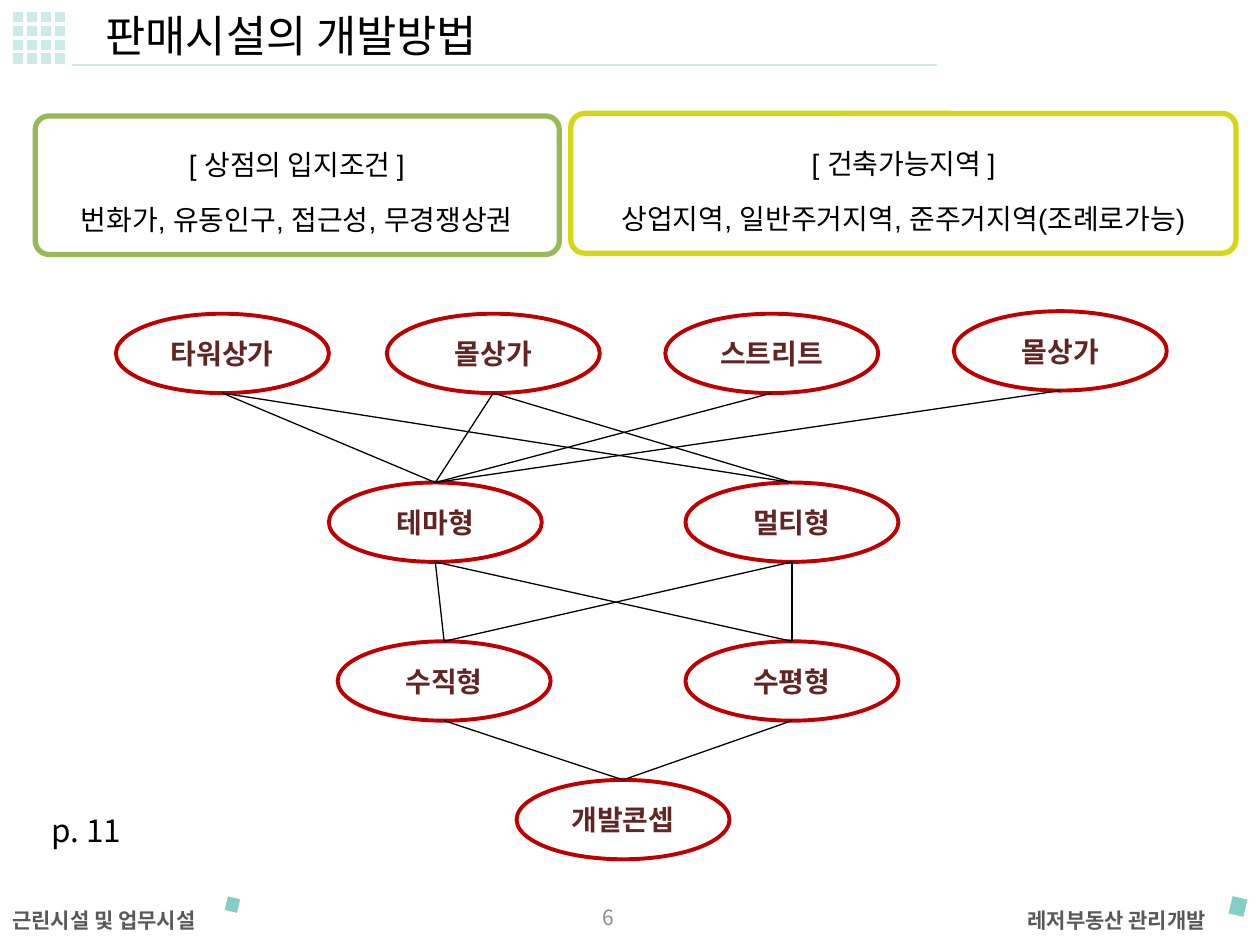
from dataclasses import dataclass
from itertools import product

from lxml.etree import SubElement
from pptx import Presentation
from pptx.dml.color import RGBColor
from pptx.enum.shapes import MSO_CONNECTOR, MSO_SHAPE
from pptx.enum.text import MSO_ANCHOR, PP_ALIGN
from pptx.oxml.ns import qn
from pptx.util import Inches, Pt

# A grid of 100 columns by 75 rows covers the slide
WIDTH, HEIGHT = Inches(10), Inches(7.5)
COLUMN, ROW = WIDTH / 100, HEIGHT / 75
KOREAN, LATIN = "Noto Sans CJK KR", "Arial"
TEAL, RED, BROWN, GREY = "44B6AB", "C00000", "632523", "595959"
NODE_WIDTH, NODE_HEIGHT = 16.9, 6.3


@dataclass(frozen=True)
class Box:
    column: float
    row: float
    columns: float
    rows: float

    def emu(self) -> tuple[int, int, int, int]:
        return (round(self.column * COLUMN), round(self.row * ROW),
                round(self.columns * COLUMN), round(self.rows * ROW))


@dataclass(frozen=True)
class Label:
    lines: tuple[str, ...]
    size: float
    color: str = "000000"
    bold: bool = False
    font: str = KOREAN
    align: PP_ALIGN = PP_ALIGN.LEFT
    anchor: MSO_ANCHOR = MSO_ANCHOR.TOP


@dataclass(frozen=True)
class Node:
    text: str
    column: float
    row: float
    children: tuple[str, ...] = ()


@dataclass(frozen=True)
class Panel:
    frame: Box
    text_box: Box
    line: str
    lines: tuple[str, str]


def rgb(color: str) -> RGBColor:
    return RGBColor.from_string(color)


def write(shape, label: Label, **paragraph_format) -> None:
    frame = shape.text_frame
    frame.word_wrap = True
    frame.vertical_anchor = label.anchor
    for index, line in enumerate(label.lines):
        paragraph = frame.paragraphs[0] if index == 0 else frame.add_paragraph()
        paragraph.alignment = label.align
        for name, value in paragraph_format.items():
            setattr(paragraph, name, value)
        run = paragraph.add_run()
        run.text = line
        values = {"name": label.font, "size": Pt(label.size), "bold": label.bold}
        for name, value in values.items():
            setattr(run.font, name, value)
        run.font.color.rgb = rgb(label.color)
        SubElement(run.font._element, qn("a:ea"), typeface=KOREAN)


def add_text(slide, box: Box, label: Label, **paragraph_format):
    shape = slide.shapes.add_textbox(*box.emu())
    write(shape, label, **paragraph_format)
    return shape


def add_shape(slide, kind: MSO_SHAPE, box: Box, fill: str, line: str,
              line_width: float, opacity: int = 100, rotation: float = 0):
    shape = slide.shapes.add_shape(kind, *box.emu())
    shape.shadow.inherit = False
    shape.rotation = rotation
    shape.fill.solid()
    shape.fill.fore_color.rgb = rgb(fill)
    if opacity < 100:
        color = shape.fill._xPr.find(qn("a:solidFill"))[0]
        SubElement(color, qn("a:alpha"), val=str(opacity * 1000))
    shape.line.color.rgb = rgb(line)
    shape.line.width = Pt(line_width)
    return shape


def add_tile(slide, box: Box, opacity: int, rotation: float = 0) -> None:
    add_shape(slide, MSO_SHAPE.RECTANGLE, box, TEAL, "FFFFFF", 2, opacity, rotation)


def add_node(slide, node: Node):
    box = Box(node.column, node.row, NODE_WIDTH, NODE_HEIGHT)
    shape = add_shape(slide, MSO_SHAPE.OVAL, box, "FFFFFF", RED, 2.25)
    write(shape, Label((node.text,), 16, BROWN, True, align=PP_ALIGN.CENTER,
                       anchor=MSO_ANCHOR.MIDDLE))
    return shape


def add_link(slide, parent, child) -> None:
    connector = slide.shapes.add_connector(
        MSO_CONNECTOR.STRAIGHT,
        parent.left + parent.width // 2, parent.top + parent.height,
        child.left + child.width // 2, child.top)
    connector.end_connect(child, 0)
    connector.line.color.rgb = rgb("000000")
    connector.line.width = Pt(0.75)
    SubElement(connector._element.spPr, qn("a:effectLst"))


def add_panel(slide, panel: Panel) -> None:
    frame = add_shape(slide, MSO_SHAPE.ROUNDED_RECTANGLE, panel.frame,
                      "FFFFFF", panel.line, 3, 23)
    frame.adjustments[0] = 0.1
    label = Label(panel.lines, 16, font=LATIN, align=PP_ALIGN.CENTER)
    text = add_text(slide, panel.text_box, label,
                    line_spacing=1.5, space_after=Pt(2.4))
    for side in ("left", "top", "right", "bottom"):
        setattr(text.text_frame, f"margin_{side}", Inches(0.09))


THEME, MULTI, VERTICAL, HORIZONTAL, CONCEPT = (
    "테마형", "멀티형", "수직형", "수평형", "개발콘셉")
NODES = (
    Node("타워상가", 9.2, 24.9, (THEME, MULTI)),
    Node("몰상가", 30.7, 24.9, (THEME, MULTI)),
    Node("스트리트", 52.8, 24.9, (THEME,)),
    Node("몰상가", 75.7, 24.7, (THEME,)),
    Node(THEME, 26.1, 38.3, (VERTICAL, HORIZONTAL)),
    Node(MULTI, 54.4, 38.3, (VERTICAL, HORIZONTAL)),
    Node(VERTICAL, 26.8, 50.9, (CONCEPT,)),
    Node(HORIZONTAL, 54.4, 50.9, (CONCEPT,)),
    Node(CONCEPT, 41, 61.9),
)
PANELS = (
    Panel(Box(2.8, 9.2, 41.6, 11), Box(3.6, 9.5, 39.9, 10.4), "98B955",
          ("[ 상점의 입지조건 ]", "번화가, 유동인구, 접근성, 무경쟁상권")),
    Panel(Box(45.3, 9, 52.8, 11.1), Box(46.4, 9.4, 50.6, 10.5), "D3D812",
          ("[ 건축가능지역 ]", "상업지역, 일반주거지역, 준주거지역(조례로가능)")),
)


def main() -> None:
    presentation = Presentation()
    presentation.slide_width, presentation.slide_height = WIDTH, HEIGHT
    slide = presentation.slides.add_slide(presentation.slide_layouts[6])

    # Footer
    add_text(slide, Box(0, 71.5, 19.3, 3), Label(("근린시설 및 업무시설",), 12, GREY, True))
    add_tile(slide, Box(17.8, 71.1, 1.3, 1.4), 66, 13.3)
    add_text(slide, Box(74.2, 71.5, 22.5, 3),
             Label(("레저부동산 관리개발",), 12, GREY, True, align=PP_ALIGN.RIGHT))
    add_tile(slide, Box(97.5, 71.1, 1.5, 1.7), 66, 13.3)

    # Title with its tile grid and underline
    tile = 1.1
    for row, column in product(range(4), repeat=2):
        add_tile(slide, Box(0.9 + column * tile, 0.8 + row * tile, tile, tile), 27)
    add_tile(slide, Box(5.6, 4.9, 68.9, 0.5), 27)
    add_text(slide, Box(7.4, 0.2, 38.3, 5.2), Label(("판매시설의 개발방법",), 25))

    # Concept tree
    shapes = [add_node(slide, node) for node in NODES]
    by_text = {node.text: shape for node, shape in zip(NODES, shapes)}
    for node, shape in zip(NODES, shapes):
        for child in node.children:
            add_link(slide, shape, by_text[child])

    # Page reference, condition panels and slide number
    add_text(slide, Box(3.1, 63.9, 9.4, 4), Label(("p. 11",), 18))
    for panel in PANELS:
        add_panel(slide, panel)
    add_text(slide, Box(36.6, 70.8, 23.3, 4),
             Label(("6",), 12, "8C8C8C", align=PP_ALIGN.CENTER, anchor=MSO_ANCHOR.MIDDLE))

    presentation.save("out.pptx")


if __name__ == "__main__":
    main()
